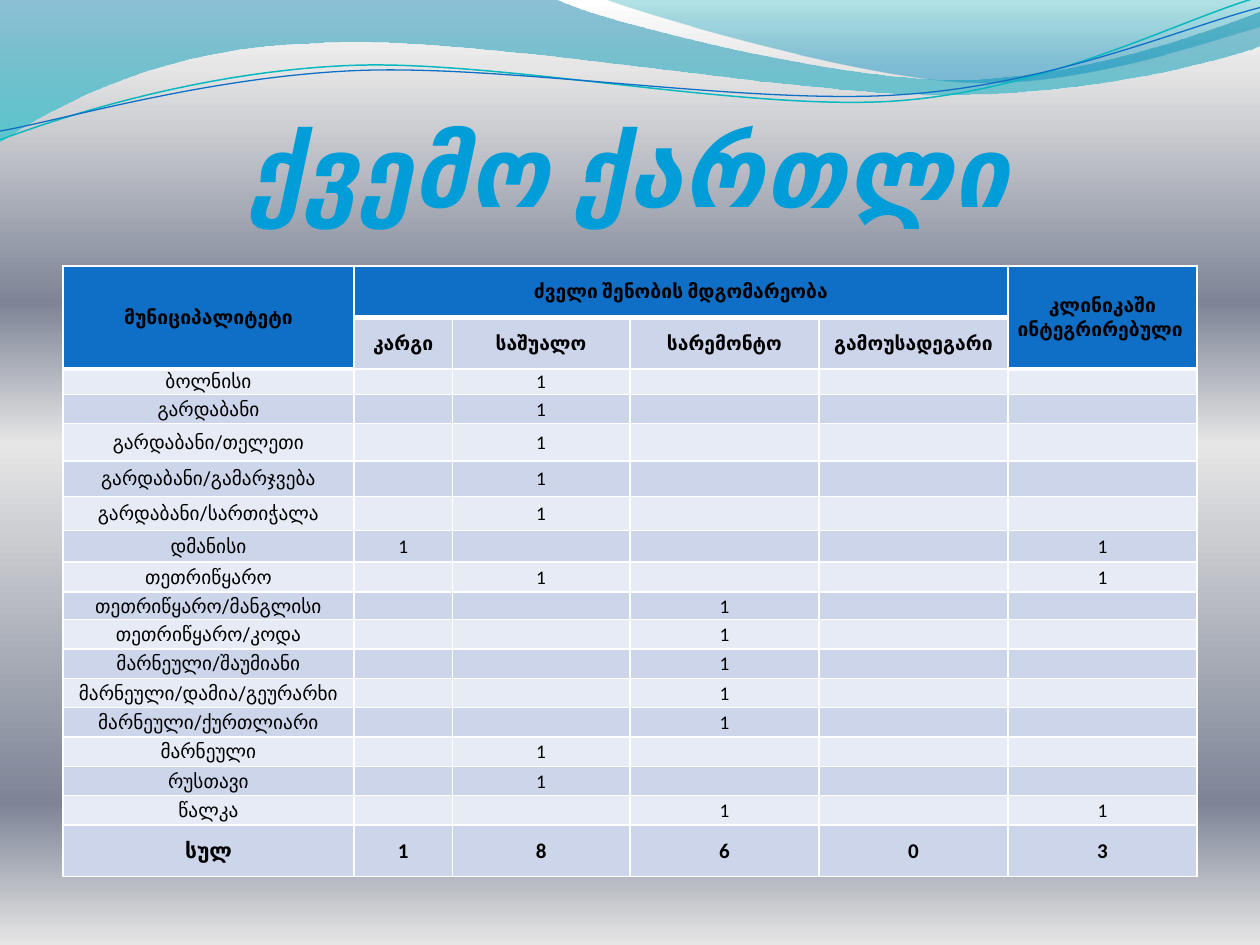
import math
import pptx
import pptx.util
import pptx.dml.color
import pptx.enum.text
import pptx.oxml.ns
from lxml import etree

Inches, Pt = pptx.util.Inches, pptx.util.Pt
RGBColor = pptx.dml.color.RGBColor
PP_ALIGN, MSO_ANCHOR = pptx.enum.text.PP_ALIGN, pptx.enum.text.MSO_ANCHOR
qn = pptx.oxml.ns.qn

BLUE = RGBColor(0x0F, 0x6F, 0xC6)
TEAL = RGBColor(0x0A, 0xB8, 0xBF)
SKY = RGBColor(0x00, 0x9D, 0xD9)
BLACK = RGBColor(0, 0, 0)
WHITE = RGBColor(0xFF, 0xFF, 0xFF)
BAND_DARK = RGBColor(0xCC, 0xD5, 0xEA)
BAND_LIGHT = RGBColor(0xE7, 0xEB, 0xF5)
GREY = RGBColor(0xE6, 0xE6, 0xE6)
SLATE = RGBColor(0x7D, 0x84, 0x96)
DEEP_BLUE = RGBColor(0x00, 0x74, 0xA1)
AQUA = RGBColor(0x00, 0xC6, 0xCF)
DEEP_TEAL = RGBColor(0x00, 0xA1, 0xA9)
OCEAN = RGBColor(0x00, 0x8B, 0xBF)

BACKGROUND = [(0, WHITE, 100), (7, GREY, 100), (32, SLATE, 100),
              (47, GREY, 100), (85, SLATE, 100), (100, GREY, 100)]

WAVES = [
    ([(0, 0), (4.4, -0.01), (4.76, 0.17, 6.64, 0.63, 7.58, 0.63),
      (8.53, 0.63, 9.58, 0.26, 10, 0.09), (10.01, 0.36),
      (9.83, 0.44, 8.7, 0.76, 7.46, 0.75), (6.22, 0.75, 3.82, 0.28, 2.57, 0.34),
      (1.29, 0.36, 0.46, 0.83, -0.01, 1.13), (0, 0)],
     [(0, DEEP_BLUE, 45), (100, AQUA, 55)]),
    ([(4.79, -0.01), (5.09, 0.11, 6.82, 0.62, 7.69, 0.65),
      (8.56, 0.69, 9.61, 0.32, 10, 0.21), (10, 0), (4.79, -0.01)],
     [(0, DEEP_TEAL, 30), (80, OCEAN, 45)]),
]

RIPPLES = [
    ([(0, 1.11), (0.48, 0.93, 1.58, 0.57, 2.77, 0.52),
      (3.95, 0.47, 5.93, 0.89, 7.13, 0.8), (8.33, 0.71, 9.38, 0.15, 9.98, -0.02)],
     TEAL, 0.85),
    ([(0, 1.04), (0.47, 0.96, 1.64, 0.61, 2.83, 0.56),
      (4.03, 0.51, 5.97, 0.84, 7.17, 0.75), (8.36, 0.67, 9.41, 0.21, 10, 0.06)],
     BLUE, 0.75),
]
RIPPLE_TILT = -2.7
RIPPLE_CENTER = (4.99, 0.58)

TITLE = "ქვემო ქართლი"
ROWS = [
    ["მუნიციპალიტეტი", "ძველი შენობის მდგომარეობა", "", "", "", "კლინიკაში ინტეგრირებული "],
    ["", "კარგი", "საშუალო", "სარემონტო", "გამოუსადეგარი", ""],
    ["ბოლნისი", "", "1", "", "", ""],
    ["გარდაბანი", "", "1", "", "", ""],
    ["გარდაბანი/თელეთი", "", "1", "", "", ""],
    ["გარდაბანი/გამარჯვება", "", "1", "", "", ""],
    ["გარდაბანი/სართიჭალა", "", "1", "", "", ""],
    ["დმანისი", "1", "", "", "", "1"],
    ["თეთრიწყარო", "", "1", "", "", "1"],
    ["თეთრიწყარო/მანგლისი", "", "", "1", "", ""],
    ["თეთრიწყარო/კოდა", "", "", "1", "", ""],
    ["მარნეული/შაუმიანი", "", "", "1", "", ""],
    ["მარნეული/დამია/გეურარხი", "", "", "1", "", ""],
    ["მარნეული/ქურთლიარი", "", "", "1", "", ""],
    ["მარნეული", "", "1", "", "", ""],
    ["რუსთავი", "", "1", "", "", ""],
    ["წალკა", "", "", "1", "", "1"],
    ["სულ", "1", "8", "6", "0", "3"],
]
TABLE_HEIGHT = 4.85
COL_WIDTHS = [2.31, 0.78, 1.41, 1.5, 1.5, 1.5]
TOP_HEIGHTS = [0.41, 0.41, 0.2, 0.23, 0.3, 0.28, 0.27, 0.25, 0.24, 0.22]
TOTAL_HEIGHT = 0.41
EVEN_ROWS = len(ROWS) - len(TOP_HEIGHTS) - 1
EVEN_HEIGHT = (TABLE_HEIGHT - sum(TOP_HEIGHTS) - TOTAL_HEIGHT) / EVEN_ROWS
ROW_HEIGHTS = TOP_HEIGHTS + [EVEN_HEIGHT] * EVEN_ROWS + [TOTAL_HEIGHT]
MERGES = [((0, 0), (1, 0)), ((0, 1), (0, 4)), ((0, 5), (1, 5))]


def set_gradient(fill, owner, stops):
    fill.gradient()
    grad = owner.xpath(".//a:gradFill")[0]
    for child in list(grad):
        grad.remove(child)
    stop_list = etree.SubElement(grad, qn("a:gsLst"))
    for pos, color, opacity in stops:
        gs = etree.SubElement(stop_list, qn("a:gs"), pos=str(pos * 1000))
        clr = etree.SubElement(gs, qn("a:srgbClr"), val=str(color))
        if opacity < 100:
            etree.SubElement(clr, qn("a:alpha"), val=str(opacity * 1000))
    etree.SubElement(grad, qn("a:lin"), ang="5400000", scaled="0")


def pairs(seg):
    return list(zip(seg[::2], seg[1::2]))


def turn(seg, degrees):
    cos, sin = math.cos(math.radians(degrees)), math.sin(math.radians(degrees))
    cx, cy = RIPPLE_CENTER
    turned = []
    for x, y in pairs(seg):
        turned += [cx + (x - cx) * cos - (y - cy) * sin, cy + (x - cx) * sin + (y - cy) * cos]
    return turned


def add_outline(s, segments, close):
    nodes = [(Inches(seg[-2]), Inches(seg[-1])) for seg in segments]
    fb = s.shapes.build_freeform(*nodes[0])
    fb.add_line_segments(nodes[1:], close=close)
    sp = fb.convert_to_shape()
    sp.shadow.inherit = False
    for seg, step in zip(segments[1:], sp._element.xpath(".//a:lnTo")):
        if len(seg) == 6:
            curve = etree.Element(qn("a:cubicBezTo"))
            for x, y in pairs(seg):
                etree.SubElement(curve, qn("a:pt"), x=str(Inches(x) - sp.left), y=str(Inches(y) - sp.top))
            step.getparent().replace(step, curve)
    return sp


def set_font(font, name, size, color, bold):
    font.name, font.size, font.bold = name, Pt(size), bold
    font.color.rgb = color


def set_borders(cell, bottom):
    tcPr = cell._tc.get_or_add_tcPr()
    for side, width in (("L", 1), ("R", 1), ("T", 1), ("B", bottom)):
        ln = etree.SubElement(tcPr, qn("a:ln" + side), w=str(Pt(width)))
        fill = etree.SubElement(ln, qn("a:solidFill"))
        etree.SubElement(fill, qn("a:srgbClr"), val=str(WHITE))


def add_table(s):
    table = s.shapes.add_table(len(ROWS), len(COL_WIDTHS), Inches(0.5), Inches(2.11),
                               Inches(sum(COL_WIDTHS)), Inches(TABLE_HEIGHT)).table
    table.first_row = table.horz_banding = False
    for col, width in zip(table.columns, COL_WIDTHS):
        col.width = Inches(width)
    for row, height in zip(table.rows, ROW_HEIGHTS):
        row.height = Inches(height)
    for i, texts in enumerate(ROWS):
        total = i == len(ROWS) - 1
        for j, text in enumerate(texts):
            cell = table.cell(i, j)
            header = i == 0 or (i == 1 and j in (0, 5))
            cell.margin_left = cell.margin_right = cell.margin_top = Inches(0.01)
            cell.margin_bottom = 0
            cell.vertical_anchor = MSO_ANCHOR.MIDDLE
            cell.text = text
            p = cell.text_frame.paragraphs[0]
            p.alignment = PP_ALIGN.CENTER
            size = 12 if total else 11
            set_font(p.font, "Calibri" if j else "Roboto", size, BLACK, i < 2 or total)
            if not text:
                etree.SubElement(p._p, qn("a:endParaRPr"), sz=str(size * 100))
            set_borders(cell, 3 if header else 1)
            cell.fill.solid()
            band = BAND_DARK if i % 2 or total else BAND_LIGHT
            cell.fill.fore_color.rgb = BLUE if header else band
    for first, last in MERGES:
        table.cell(*first).merge(table.cell(*last))


def add_title(s):
    tf = s.shapes.add_textbox(Inches(0.5), Inches(0.77), Inches(9), Inches(1.03)).text_frame
    tf.word_wrap = True
    tf.vertical_anchor = MSO_ANCHOR.BOTTOM
    tf.margin_left = tf.margin_right = tf.margin_bottom = 0
    tf.margin_top = Inches(0.05)
    tf.text = TITLE
    p = tf.paragraphs[0]
    p.alignment = PP_ALIGN.CENTER
    set_font(p.font, "Calibri", 56, SKY, True)
    p.font.italic = True
    p.runs[0]._r.get_or_add_rPr().set("spc", "50")


def main():
    prs = pptx.Presentation()
    prs.slide_width, prs.slide_height = Inches(10), Inches(7.5)
    s = prs.slides.add_slide(prs.slide_layouts[6])
    set_gradient(s.background.fill, s._element, BACKGROUND)
    for segments, stops in WAVES:
        sp = add_outline(s, segments, True)
        set_gradient(sp.fill, sp._element, stops)
        sp.line.fill.background()
    for segments, color, width in RIPPLES:
        sp = add_outline(s, [turn(seg, -RIPPLE_TILT) for seg in segments], False)
        sp.rotation = RIPPLE_TILT
        sp.fill.background()
        sp.line.color.rgb = color
        sp.line.width = Pt(width)
    add_title(s)
    add_table(s)
    prs.save("out.pptx")


if __name__ == "__main__":
    main()
